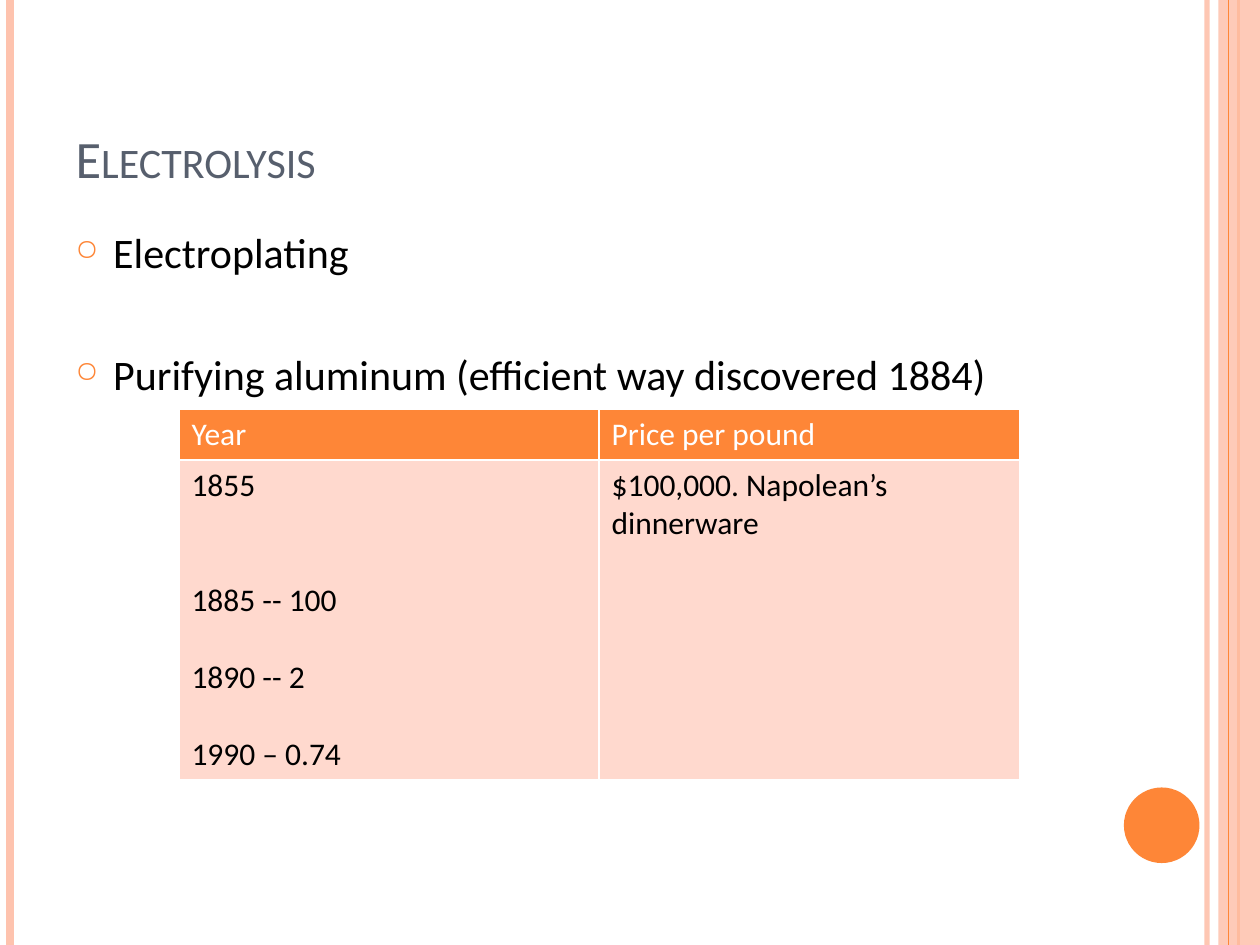
from dataclasses import dataclass

from lxml import etree
from pptx import Presentation, util as u
from pptx.dml.color import RGBColor
from pptx.enum import shapes, text
from pptx.oxml.ns import qn


@dataclass(frozen=True)
class Theme:
    font: str = "Calibri"
    orange: str = "FE8637"
    peach: str = "FEC3AE"
    pale: str = "FFD9CE"
    slate: str = "575F6D"
    black: str = "000000"
    white: str = "FFFFFF"
    title_size: int = 30
    body_size: int = 24
    table_size: int = 18


def add_xml(parent, tag, **attributes):
    return etree.SubElement(parent, qn(tag), attributes)


def set_alpha(properties, percent):
    color = next(properties.iter(qn("a:srgbClr")))
    add_xml(color, "a:alpha", val=str(percent * 1000))


class SlideBuilder:
    def __init__(self, slide, theme):
        self.slide = slide
        self.theme = theme

    def style(self, paragraph, size, color):
        for run in paragraph.runs:
            run.font.name = self.theme.font
            run.font.size = u.Pt(size)
            run.font.bold = False
            run.font.color.rgb = RGBColor.from_string(color)

    def stripe(self, x, width, color, opacity=100):
        """Draw a vertical line over the full slide height."""
        stripe = self.slide.shapes.add_connector(
            shapes.MSO_CONNECTOR.STRAIGHT,
            u.Inches(x), 0, u.Inches(x), u.Inches(7.5))
        stripe.line.width = u.Pt(width)
        stripe.line.color.rgb = RGBColor.from_string(color)
        properties = stripe._element.spPr
        add_xml(properties, "a:effectLst")
        if opacity < 100:
            set_alpha(properties, opacity)

    def shape(self, kind, box, color, opacity=100):
        shape = self.slide.shapes.add_shape(kind, *map(u.Inches, box))
        shape.shadow.inherit = False
        shape.fill.solid()
        shape.fill.fore_color.rgb = RGBColor.from_string(color)
        shape.line.fill.background()
        if opacity < 100:
            set_alpha(shape._element.spPr, opacity)

    def title(self, wording, box):
        title = self.slide.shapes.title
        title.left, title.top, title.width, title.height = map(u.Inches, box)
        frame = title.text_frame
        frame.text = wording
        frame.auto_size = text.MSO_AUTO_SIZE.NONE
        frame.vertical_anchor = text.MSO_ANCHOR.BOTTOM
        paragraph = frame.paragraphs[0]
        paragraph.alignment = text.PP_ALIGN.LEFT
        self.style(paragraph, self.theme.title_size, self.theme.slate)
        paragraph.runs[0].font._element.set("cap", "small")

    def bullets(self, items, box):
        """Items are pairs of wording and space before in points."""
        frame = self.slide.shapes.add_textbox(*map(u.Inches, box)).text_frame
        frame.word_wrap = True
        frame.text = "\n".join(wording for wording, _ in items)
        for paragraph, (_, gap) in zip(frame.paragraphs, items):
            paragraph.space_before = u.Pt(gap)
            self.style(paragraph, self.theme.body_size, self.theme.black)
            properties = paragraph._p.get_or_add_pPr()
            properties.set("marL", str(u.Inches(0.3)))
            properties.set("indent", str(u.Inches(-0.3)))
            color = add_xml(properties, "a:buClr")
            add_xml(color, "a:srgbClr", val=self.theme.orange)
            add_xml(properties, "a:buSzPct", val="70000")
            add_xml(properties, "a:buChar", char="○")

    def table(self, rows, box, heights):
        """Cells are lists of pairs of wording and space before in points."""
        table = self.slide.shapes.add_table(
            len(rows), len(rows[0]), *map(u.Inches, box)).table
        for r, (row, height) in enumerate(zip(rows, heights)):
            table.rows[r].height = u.Inches(height)
            fill, ink = ((self.theme.pale, self.theme.black) if r
                         else (self.theme.orange, self.theme.white))
            for c, entries in enumerate(row):
                self.cell(table.cell(r, c), entries, fill, ink)

    def cell(self, cell, entries, fill, ink):
        for side in "LRTB":
            border = add_xml(cell._tc.get_or_add_tcPr(), f"a:ln{side}",
                             w=str(u.Pt(1)))
            add_xml(add_xml(border, "a:solidFill"), "a:srgbClr",
                    val=self.theme.white)
        cell.fill.solid()
        cell.fill.fore_color.rgb = RGBColor.from_string(fill)
        cell.text_frame.text = "\n".join(wording for wording, _ in entries)
        for paragraph, (_, gap) in zip(cell.text_frame.paragraphs, entries):
            paragraph.space_before = u.Pt(gap)
            self.style(paragraph, self.theme.table_size, ink)


def main():
    deck = Presentation()
    deck.slide_width, deck.slide_height = u.Inches(10), u.Inches(7.5)
    theme = Theme()
    page = SlideBuilder(deck.slides.add_slide(deck.slide_layouts[5]), theme)

    page.stripe(9.58, 3, theme.peach, opacity=93)
    page.stripe(0.08, 4.5, theme.peach)
    page.stripe(9.83, 1.5, theme.orange)
    page.shape(shapes.MSO_SHAPE.RECTANGLE, (9.67, 0, 0.33, 7.5),
               theme.peach, opacity=87)
    page.stripe(9.75, 0.75, theme.orange)
    page.shape(shapes.MSO_SHAPE.OVAL, (8.92, 6.25, 0.6, 0.6), theme.orange)

    page.title("Electrolysis", (0.5, 0.3, 8.17, 1.25))
    page.bullets([("Electroplating", 6),
                  ("Purifying aluminum (efficient way discovered 1884)", 41)],
                 (0.5, 1.75, 8.17, 5.33))

    table_line = 22
    years = [("1855", 0), ("1885 -- 100", 2 * table_line),
             ("1890 -- 2", table_line), ("1990 – 0.74", table_line)]
    page.table([[[("Year", 0)], [("Price per pound", 0)]],
                [years, [("$100,000. Napolean’s dinnerware", 0)]]],
               (1.42, 3.25, 6.67, 2.94), heights=(0.4, 2.54))
    deck.save("out.pptx")


if __name__ == "__main__":
    main()
